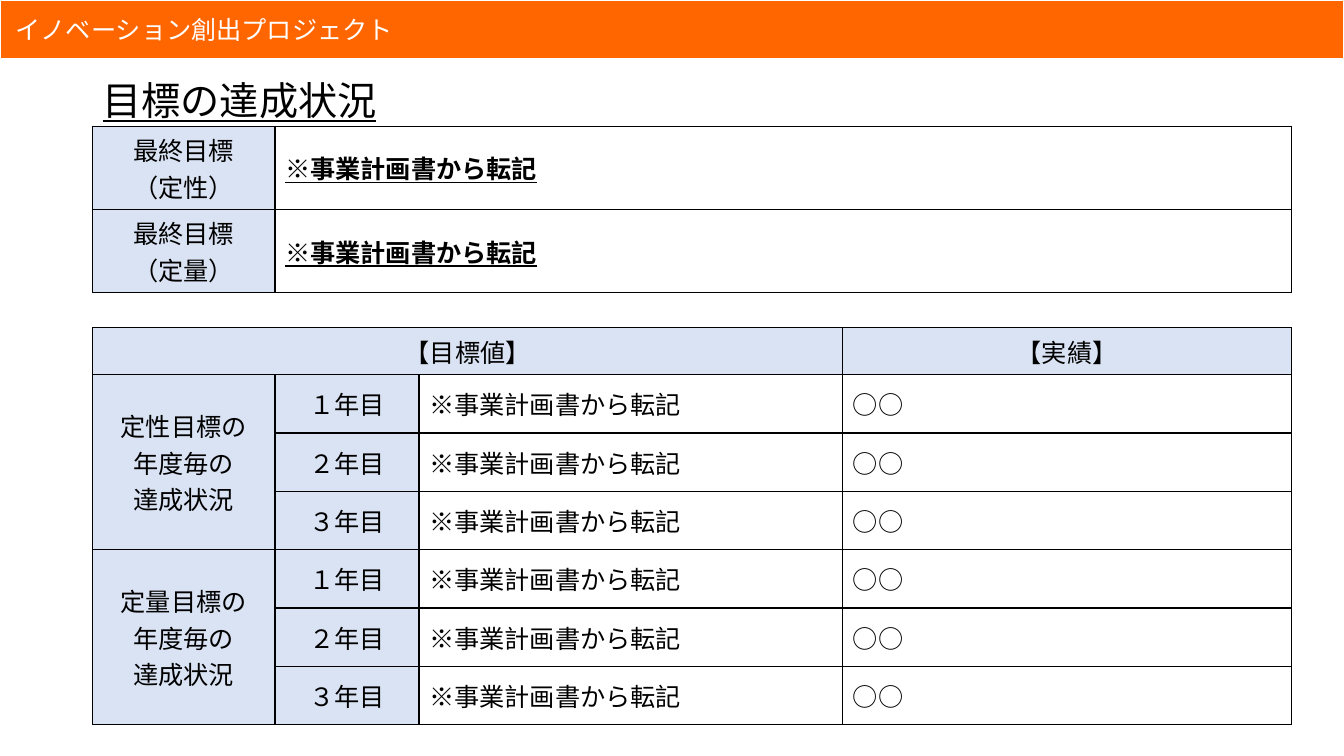
from lxml.etree import SubElement as Sub
from pptx import Presentation
from pptx.dml.color import RGBColor as Rgb
from pptx.enum.shapes import MSO_SHAPE as Shape
from pptx.enum.text import MSO_ANCHOR as Anchor, PP_ALIGN as Align
from pptx.oxml.ns import qn
from pptx.util import Cm, Pt

FONT = "Noto Sans CJK JP"
COLORS = {"band": "FF6600", "label": "DAE3F3", "text": "000000", "white": "FFFFFF"}
WIDTHS = [4.6, 3.63, 10.68, 3.05, 8.26]
HEIGHTS = [2.1, 2.1, 0.88, 1.18] + [1.47] * 6
GAP = 2  # row that parts the two blocks
NOTE = "※事業計画書から転記"


def color(name):
    return Rgb.from_string(COLORS[name])


def style(frame, size, tint="text", align=Align.LEFT, bold=False, line=False):
    for para in frame.paragraphs:
        para.alignment = align
        for run in para.runs:
            font = run.font
            font.size, font.bold, font.underline = Pt(size), bold, line
            font.color.rgb = color(tint)
            font.name = FONT
            Sub(font._element, qn("a:ea"), typeface=FONT)


def add_band(slide, left, top, width, height):
    band = slide.shapes.add_shape(Shape.RECTANGLE, Cm(left), Cm(top), Cm(width), Cm(height))
    band.shadow.inherit = False
    band.fill.solid()
    band.fill.fore_color.rgb = color("band")
    band.line.color.rgb = color("white")
    band.line.width = Pt(1.5)
    frame = band.text_frame
    frame.text = " イノベーション創出プロジェクト"
    frame.vertical_anchor = Anchor.MIDDLE
    style(frame, 18, "white")


def add_title(slide, left, top, width, height):
    title = slide.shapes.title
    title.left, title.top, title.width, title.height = map(Cm, (left, top, width, height))
    frame = title.text_frame
    frame.text = "目標の達成状況"
    frame.vertical_anchor = Anchor.MIDDLE
    frame.paragraphs[0].line_spacing = 0.9
    style(frame, 28, line=True)


def set_edges(cell, sides):
    """Draw the given sides in black and leave the others open."""
    props = cell._tc.get_or_add_tcPr()
    for i, side in enumerate("LRTB"):
        edge = props.makeelement(qn("a:ln" + side), {"w": str(Pt(1))})
        if side in sides:
            fill = Sub(edge, qn("a:solidFill"))
            Sub(fill, qn("a:srgbClr"), val=COLORS["text"])
        else:
            Sub(edge, qn("a:noFill"))
        props.insert(i, edge)


def put(cell, text, label=False, strong=False):
    cell.text_frame.text = text
    if label:
        cell.fill.solid()
        cell.fill.fore_color.rgb = color("label")
    align = Align.CENTER if label else Align.LEFT
    style(cell.text_frame, 18, align=align, bold=strong, line=strong)


def add_goals(slide, left, top, widths, heights):
    frame = slide.shapes.add_table(len(heights), len(widths), Cm(left), Cm(top),
                                   Cm(sum(widths)), Cm(sum(heights)))
    table = frame.table
    table.first_row = table.horz_banding = False
    for col, width in zip(table.columns, widths):
        col.width = Cm(width)
    for i, (row, height) in enumerate(zip(table.rows, heights)):
        row.height = Cm(height)
        for cell in row.cells:
            cell.fill.background()
            cell.vertical_anchor = Anchor.MIDDLE
            set_edges(cell, "TB" if i == GAP else "LRTB")

    # Final goals
    for row, kind in enumerate(("定性", "定量")):
        table.cell(row, 1).merge(table.cell(row, 4))
        put(table.cell(row, 0), f"最終目標\n（{kind}）", label=True)
        put(table.cell(row, 1), NOTE, strong=True)

    # Narrow gap: small text size keeps the row low
    table.cell(GAP, 1).merge(table.cell(GAP, 2))
    for cell in table.rows[GAP].cells:
        Sub(cell.text_frame.paragraphs[0]._p, qn("a:endParaRPr"), sz="800")

    # Heads of the yearly goals
    head = GAP + 1
    for first, last, text in ((0, 2, "【目標値】"), (3, 4, "【実績】")):
        table.cell(head, first).merge(table.cell(head, last))
        put(table.cell(head, first), text, label=True)

    # Yearly goals and results
    for block, kind in enumerate(("定性", "定量")):
        start = head + 1 + 3 * block
        table.cell(start, 0).merge(table.cell(start + 2, 0))
        put(table.cell(start, 0), f"{kind}目標の\n年度毎の\n達成状況", label=True)
        for row, year in enumerate("１２３", start):
            table.cell(row, 3).merge(table.cell(row, 4))
            put(table.cell(row, 1), f"{year}年目", label=True)
            put(table.cell(row, 2), NOTE)
            put(table.cell(row, 3), "○○")


def main():
    deck = Presentation()
    deck.slide_width, deck.slide_height = Cm(33.87), Cm(19.05)
    slide = deck.slides.add_slide(deck.slide_layouts[5])
    add_band(slide, 0, 0, 33.87, 1.5)
    add_title(slide, 2.33, 1.58, 29.21, 2)
    add_goals(slide, 2.33, 3.18, WIDTHS, HEIGHTS)
    deck.save("out.pptx")


if __name__ == "__main__":
    main()
